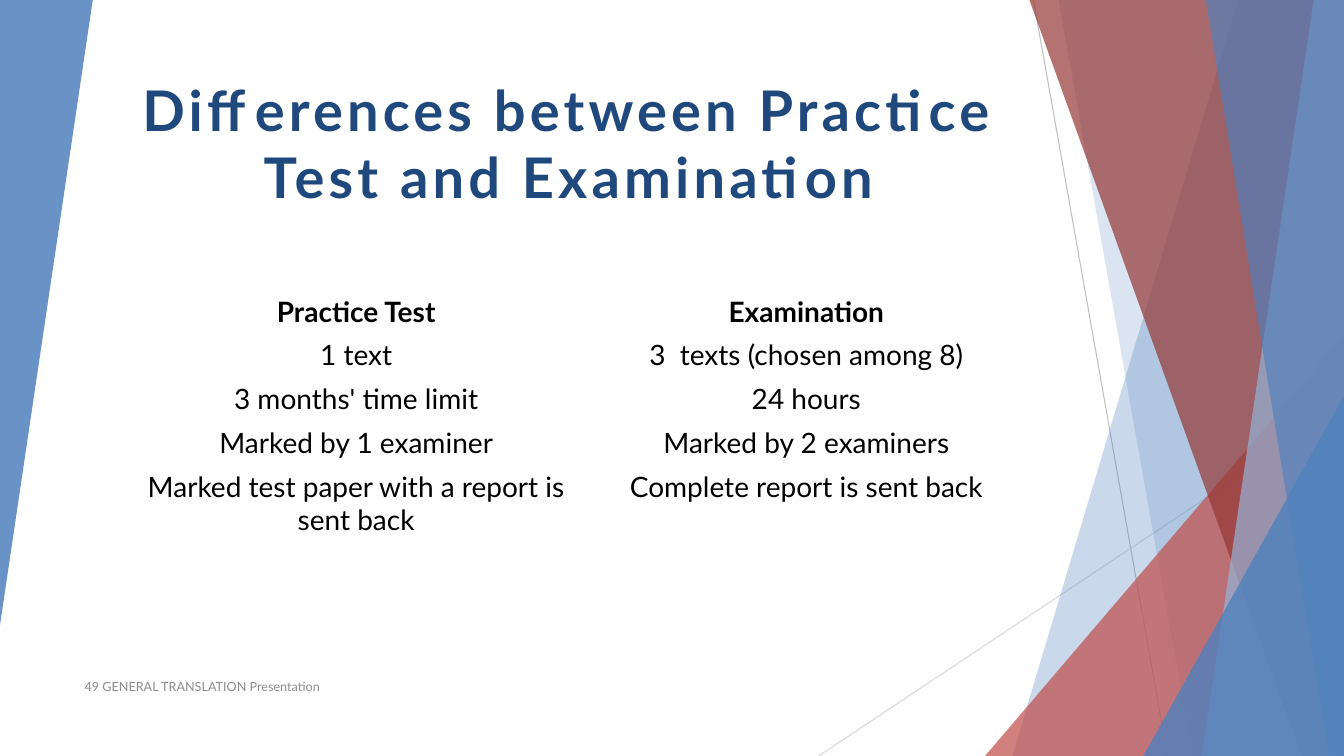
from dataclasses import dataclass

from pptx import Presentation
from pptx import util as u
from pptx.dml import color
from pptx.enum import shapes, text
from pptx.oxml import ns, xmlchemy


@dataclass(frozen=True)
class Theme:
    font: str = "Lato"
    blue: str = "4F81BD"
    light_blue: str = "95B3D7"
    red: str = "C0504D"
    dark_red: str = "953735"
    navy: str = "1F497D"
    black: str = "000000"
    footer_gray: str = "8C8C8C"
    line_gray: str = "BFBFBF"
    pale_gray: str = "D9D9D9"
    title_size: int = 40
    body_size: int = 20
    footer_size: int = 9


@dataclass(frozen=True)
class Box:
    left: float
    top: float
    width: float
    height: float

    @property
    def right(self):
        return self.left + self.width

    @property
    def bottom(self):
        return self.top + self.height

    def lengths(self):
        return [u.Inches(n) for n in (self.left, self.top, self.width, self.height)]


THEME = Theme()
PAGE = Box(0, 0, 13.33, 7.5)
TITLE = Box(0.84, 0.7, 9.6, 1.45)
COMPARISON = Box(1.3, 2.87, 8.93, 2.03)
FOOTER = Box(0.74, 6.61, 6.89, 0.4)

ROWS = [
    ("Practice Test", "Examination"),
    ("1 text", "3  texts (chosen among 8)"),
    ("3 months' time limit", "24 hours"),
    ("Marked by 1 examiner", "Marked by 2 examiners"),
    ("Marked test paper with a report is sent back", "Complete report is sent back"),
]


def rgb(value):
    return color.RGBColor.from_string(value)


def add_span(para, words, size, ink, bold=False):
    span = para.add_run()
    span.text = words
    span.font.name = THEME.font
    span.font.size = u.Pt(size)
    span.font.bold = bold
    span.font.color.rgb = rgb(ink)
    return span


def paint(shape, ink, opacity):
    """Give a shape a see-through fill with no outline or shadow."""
    shape.shadow.inherit = False
    shape.line.fill.background()
    shape.fill.solid()
    shape.fill.fore_color.rgb = rgb(ink)
    ink_element = shape.fill._xPr.find(".//" + ns.qn("a:srgbClr"))
    alpha = xmlchemy.OxmlElement("a:alpha")
    alpha.set("val", str(opacity * 1000))
    ink_element.append(alpha)


def add_hairline(page, start, end, ink):
    points = [u.Inches(n) for n in (*start, *end)]
    line = page.shapes.add_connector(shapes.MSO_CONNECTOR.STRAIGHT, *points)
    line.line.color.rgb = rgb(ink)
    line.line.width = u.Pt(0.75)
    line._element.spPr.append(xmlchemy.OxmlElement("a:effectLst"))


def add_facet(page, box, top_x, bottom_x, ink, opacity):
    """Fill the box to the right of a slanted edge from top_x to bottom_x."""
    corners = [(top_x, box.top), (box.right, box.top),
               (box.right, box.bottom), (bottom_x, box.bottom)]
    points = [(u.Inches(x), u.Inches(y)) for x, y in corners]
    outline = page.shapes.build_freeform(*points[0])
    outline.add_line_segments(points[1:], close=True)
    paint(outline.convert_to_shape(), ink, opacity)


def add_wedge(page, box, ink, opacity, rotation=0):
    """Add a right triangle with its upright side on the right."""
    wedge = page.shapes.add_shape(shapes.MSO_SHAPE.ISOSCELES_TRIANGLE, *box.lengths())
    wedge.adjustments[0] = 1
    wedge.rotation = rotation
    paint(wedge, ink, opacity)


def add_corner_wedge(page, box, width, height, ink, opacity):
    corner = Box(box.right - width, box.bottom - height, width, height)
    add_wedge(page, corner, ink, opacity)


def add_backdrop(page, box):
    add_hairline(page, (box.right - 3.08, box.top), (box.right - 1.75, box.bottom),
                 THEME.line_gray)
    add_hairline(page, (box.right, box.top + 4.03), (box.right - 5.21, box.bottom),
                 THEME.pale_gray)
    add_facet(page, box, box.right - 1.05, box.right - 3.29, THEME.blue, 30)
    add_facet(page, box, box.right - 2.83, box.right - 1.5, THEME.blue, 20)
    add_corner_wedge(page, box, 3.56, 4.17, THEME.red, 72)
    add_facet(page, box, box.right - 3.12, box.right - 0.42, THEME.dark_red, 70)
    add_facet(page, box, box.right - 0.3, box.right - 1.41, THEME.light_blue, 70)
    add_facet(page, box, box.right - 1.37, box.right - 0.15, THEME.blue, 65)
    add_corner_wedge(page, box, 1.99, 3.57, THEME.blue, 80)
    add_wedge(page, Box(box.left, box.top, 0.92, 6.2), THEME.blue, 85, rotation=180)


def add_title(page, box):
    title = page.shapes.title
    title.left, title.top, title.width, title.height = box.lengths()
    frame = title.text_frame
    frame.word_wrap = True
    frame.auto_size = text.MSO_AUTO_SIZE.NONE
    frame.vertical_anchor = text.MSO_ANCHOR.TOP
    para = frame.paragraphs[0]
    para.alignment = text.PP_ALIGN.CENTER
    span = add_span(para, "Differences between Practice Test and Examination",
                    THEME.title_size, THEME.navy, bold=True)
    span.font._element.set("spc", "300")


def add_comparison(page, box):
    columns = len(ROWS[0])
    table = page.shapes.add_table(len(ROWS), columns, *box.lengths()).table
    table.first_row = False
    table.horz_banding = False
    for column in table.columns:
        column.width = u.Inches(box.width / columns)
    for row_number, row in enumerate(ROWS):
        for column_number, words in enumerate(row):
            cell = table.cell(row_number, column_number)
            cell.fill.background()
            para = cell.text_frame.paragraphs[0]
            para.alignment = text.PP_ALIGN.CENTER
            add_span(para, words, THEME.body_size, THEME.black, bold=row_number == 0)


def add_footer(page, box):
    frame = page.shapes.add_textbox(*box.lengths()).text_frame
    frame.word_wrap = True
    frame.vertical_anchor = text.MSO_ANCHOR.MIDDLE
    add_span(frame.paragraphs[0], "49 GENERAL TRANSLATION Presentation",
             THEME.footer_size, THEME.footer_gray)


def main():
    deck = Presentation()
    deck.slide_width = u.Inches(PAGE.width)
    deck.slide_height = u.Inches(PAGE.height)
    page = deck.slides.add_slide(deck.slide_layouts.get_by_name("Title Only"))
    add_backdrop(page, PAGE)
    add_footer(page, FOOTER)
    add_title(page, TITLE)
    add_comparison(page, COMPARISON)
    deck.save("out.pptx")


if __name__ == "__main__":
    main()
